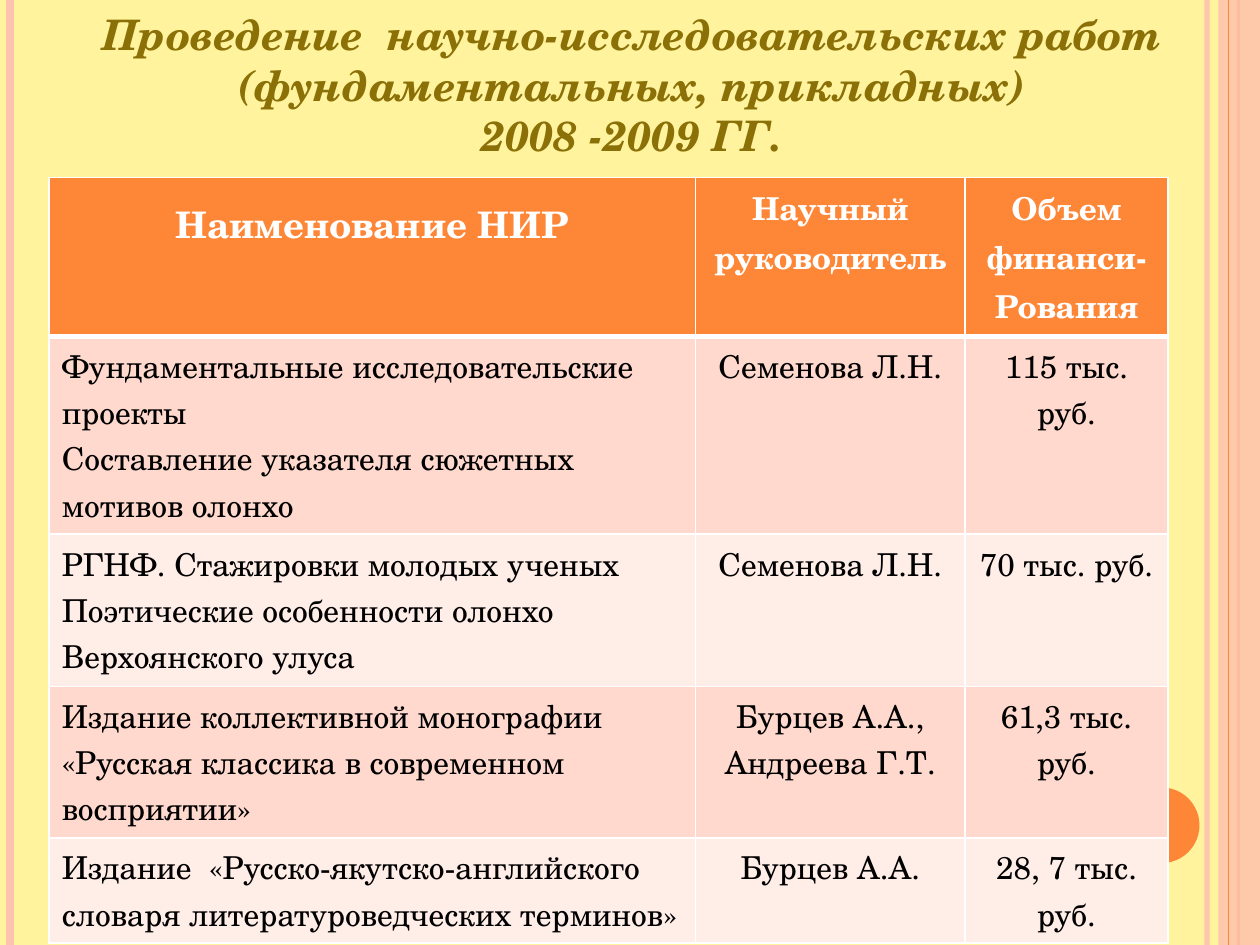
from dataclasses import dataclass

from lxml import etree
from pptx import Presentation
from pptx.dml.color import RGBColor
from pptx.enum import shapes, text
from pptx.oxml import ns
from pptx.util import Inches, Pt


@dataclass(frozen=True)
class Theme:
    font: str = "TeX Gyre Schola"
    background: str = "FFF39D"
    title: str = "8A7007"
    accent: str = "FE8637"
    pale: str = "FEC3AE"
    white: str = "FFFFFF"
    black: str = "000000"
    bands: tuple = ("FFD9CE", "FFEDE8")
    title_size: int = 24
    lead_size: int = 36
    body_size: int = 18


THEME = Theme()
SLIDE_HEIGHT = 7.5

TITLE = ("Проведение  научно-исследовательских работ "
         "(фундаментальных, прикладных)\v2008 -2009 ГГ.")
# In the texts, \v breaks a line and \n starts a paragraph
HEADERS = ("Наименование НИР", "Научный руководитель", "Объем финанси-\nРования")
PROJECTS = (
    ("Фундаментальные исследовательские проекты\v"
     "Составление указателя сюжетных мотивов олонхо",
     "Семенова Л.Н.", "115 тыс. руб."),
    ("РГНФ. Стажировки молодых ученых\v"
     "Поэтические особенности олонхо Верхоянского улуса",
     "Семенова Л.Н.", "70 тыс. руб."),
    ("Издание коллективной монографии «Русская классика в современном восприятии»",
     "Бурцев А.А., Андреева Г.Т.", "61,3 тыс. руб."),
    ("Издание  «Русско-якутско-английского словаря литературоведческих терминов»",
     "Бурцев А.А.", "28, 7 тыс. руб."),
)
COLUMN_WIDTHS = (5.13, 2.14, 1.61)
ROW_HEIGHTS = (1.26, 1.56, 1.21, 1.2, 0.83)


def rgb(value):
    return RGBColor.from_string(value)


def write(frame, content, size=THEME.body_size, color=THEME.black, bold=False,
          italic=False, align=text.PP_ALIGN.CENTER, raised=0):
    """Fill a text frame and format every run in it."""
    frame.text = content
    for paragraph in frame.paragraphs:
        paragraph.alignment = align
        for run in paragraph.runs:
            font = run.font
            font.name, font.size = THEME.font, Pt(size)
            font.bold, font.italic = bold, italic
            font.color.rgb = rgb(color)
            if raised:
                run._r.get_or_add_rPr().set("baseline", str(raised * 1000))


def set_opacity(shape, percent):
    for color in shape._element.spPr.iter(ns.qn("a:srgbClr")):
        etree.SubElement(color, ns.qn("a:alpha")).set("val", str(percent * 1000))


def add_stripe(slide, x, color, width, opacity=100):
    """Draw a vertical line over the full slide height."""
    stripe = slide.shapes.add_connector(
        shapes.MSO_CONNECTOR.STRAIGHT, Inches(x), 0, Inches(x), Inches(SLIDE_HEIGHT))
    stripe.line.color.rgb = rgb(color)
    stripe.line.width = Pt(width)
    if opacity < 100:
        set_opacity(stripe, opacity)
    etree.SubElement(stripe._element.spPr, ns.qn("a:effectLst"))


def add_block(slide, kind, left, top, width, height, color, opacity=100):
    block = slide.shapes.add_shape(
        kind, Inches(left), Inches(top), Inches(width), Inches(height))
    block.shadow.inherit = False
    block.fill.solid()
    block.fill.fore_color.rgb = rgb(color)
    block.line.fill.background()
    if opacity < 100:
        set_opacity(block, opacity)


def set_borders(cell, **widths):
    """Give a cell white borders; widths in points by side L, R, T, B."""
    properties = cell._tc.get_or_add_tcPr()
    for side, width in widths.items():
        line = etree.SubElement(properties, ns.qn(f"a:ln{side}"), w=str(Pt(width)))
        fill = etree.SubElement(line, ns.qn("a:solidFill"))
        etree.SubElement(fill, ns.qn("a:srgbClr"), val=THEME.white)


def fill_cell(cell, content, fill, top=1, bottom=1, **text_format):
    set_borders(cell, L=1, R=1, T=top, B=bottom)
    cell.fill.solid()
    cell.fill.fore_color.rgb = rgb(fill)
    write(cell.text_frame, content, **text_format)


def add_decoration(slide):
    add_stripe(slide, 9.58, THEME.pale, 3, opacity=93)
    add_stripe(slide, 0.08, THEME.pale, 4.5)
    add_stripe(slide, 9.83, THEME.accent, 1.5)
    add_block(slide, shapes.MSO_SHAPE.RECTANGLE, 9.67, 0, 0.33, SLIDE_HEIGHT,
              THEME.pale, opacity=87)
    add_stripe(slide, 9.75, THEME.accent, 0.75)
    add_block(slide, shapes.MSO_SHAPE.OVAL, 8.92, 6.25, 0.6, 0.6, THEME.accent)


def set_title(slide):
    title = slide.shapes.title
    title.left, title.top = Inches(0.5), Inches(0.3)
    title.width, title.height = Inches(9.03), Inches(1.42)
    frame = title.text_frame
    frame.word_wrap = True
    frame.auto_size = text.MSO_AUTO_SIZE.NONE
    frame.vertical_anchor = text.MSO_ANCHOR.BOTTOM
    frame.margin_bottom = Inches(0.45)
    write(frame, TITLE, size=THEME.title_size, color=THEME.title,
          bold=True, italic=True)


def add_projects(slide):
    table = slide.shapes.add_table(
        len(ROW_HEIGHTS), len(COLUMN_WIDTHS), Inches(0.39), Inches(1.41),
        Inches(sum(COLUMN_WIDTHS)), Inches(sum(ROW_HEIGHTS))).table
    for column, width in zip(table.columns, COLUMN_WIDTHS):
        column.width = Inches(width)
    for row, height in zip(table.rows, ROW_HEIGHTS):
        row.height = Inches(height)

    # Header row, with a large raised first heading
    for index, heading in enumerate(HEADERS):
        lead = {"size": THEME.lead_size, "raised": 30} if index == 0 else {}
        fill_cell(table.cell(0, index), heading, THEME.accent, bottom=3,
                  color=THEME.white, bold=True, **lead)

    # Banded project rows
    for number, project in enumerate(PROJECTS, start=1):
        band = THEME.bands[(number - 1) % 2]
        for index, content in enumerate(project):
            align = text.PP_ALIGN.CENTER if index else text.PP_ALIGN.LEFT
            fill_cell(table.cell(number, index), content, band,
                      top=3 if number == 1 else 1, align=align)


def main():
    deck = Presentation()
    deck.slide_width, deck.slide_height = Inches(10), Inches(SLIDE_HEIGHT)
    slide = deck.slides.add_slide(deck.slide_layouts[5])
    slide.background.fill.solid()
    slide.background.fill.fore_color.rgb = rgb(THEME.background)
    add_decoration(slide)
    set_title(slide)
    add_projects(slide)
    deck.save("out.pptx")


if __name__ == "__main__":
    main()
